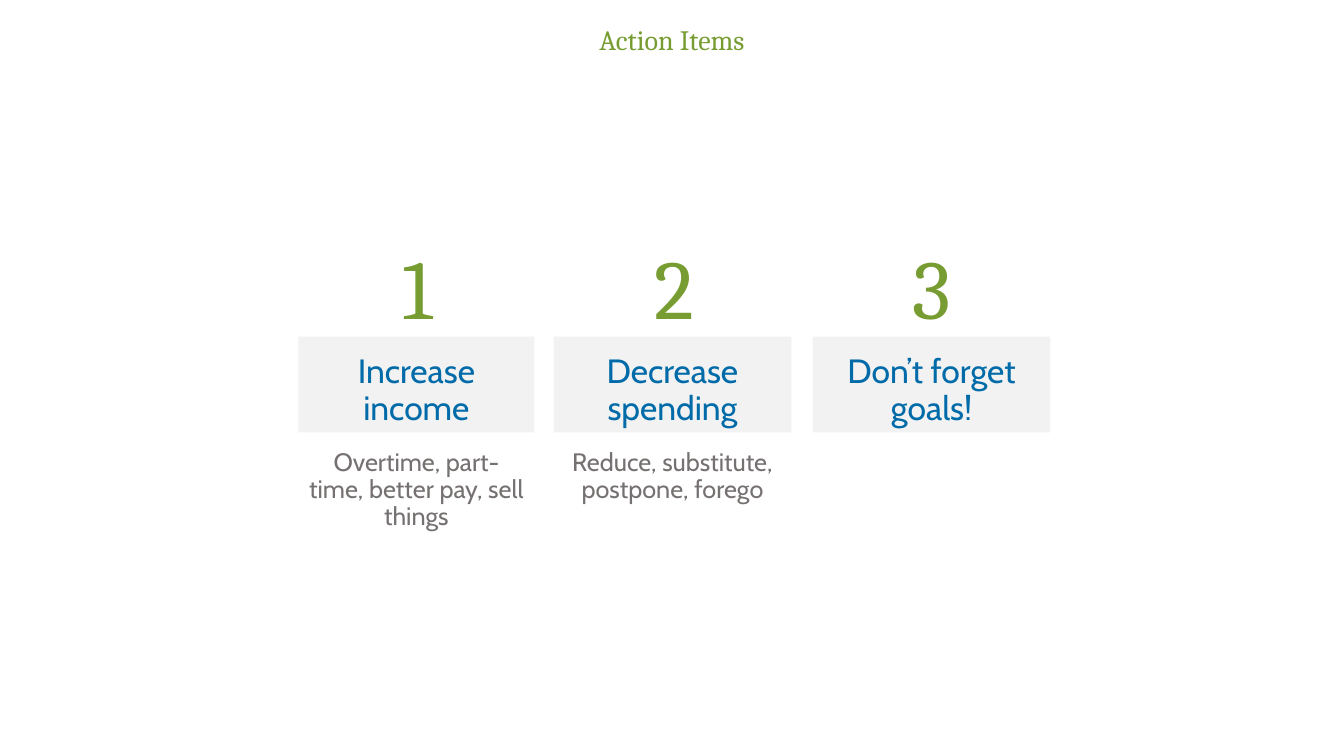
from dataclasses import dataclass

from pptx import Presentation
from pptx import util as u
from pptx.dml.color import RGBColor
from pptx.enum import shapes, text

PX = 9144  # EMU, 100 px to the inch
GREEN, BLUE, GREY, PALE = "779C31", "006BA8", "767171", "F2F2F2"
NUMBER_TOP, HEADING_TOP, DETAIL_TOP = 207, 334, 428
NUMBER_WIDTH, NUMBER_HEIGHT, BOX_HEIGHT = 236, 127, 95
TOP, BOTTOM = text.MSO_ANCHOR.TOP, text.MSO_ANCHOR.BOTTOM


@dataclass(frozen=True)
class Style:
    font: str
    size: int
    color: str
    spacing: float = 0.9
    anchor: text.MSO_ANCHOR = TOP
    insets: tuple[int, int, int, int] = (9, 18, 9, 0)


@dataclass(frozen=True)
class Action:
    number_left: int
    box_left: int
    box_width: int
    heading: str
    detail: str = ""


TITLE = Style("Cambria", 20, GREEN, insets=(10, 5, 10, 5))
NUMBER = Style("Cambria", 60, GREEN, 1.2, BOTTOM, (0, 0, 0, 0))
HEADING = Style("Cabin", 24, BLUE)
DETAIL = Style("Cabin", 18, GREY)

ACTIONS = [
    Action(296, 296, 234, "Increase income",
           "Overtime, part-time, better pay, sell things"),
    Action(551, 549, 236, "Decrease spending",
           "Reduce, substitute, postpone, forego"),
    Action(806, 806, 236, "Don’t forget goals!"),
]


def rgb(color: str) -> RGBColor:
    return RGBColor.from_string(color)


def set_all(target, values: dict) -> None:
    for name, value in values.items():
        setattr(target, name, value)


def write(sp, words: str, style: Style) -> None:
    tf = sp.text_frame
    sides = ("margin_left", "margin_top", "margin_right", "margin_bottom")
    set_all(tf, {"word_wrap": True, "auto_size": text.MSO_AUTO_SIZE.NONE,
                 "vertical_anchor": style.anchor})
    set_all(tf, {side: inset * PX for side, inset in zip(sides, style.insets)})
    p = tf.paragraphs[0]
    set_all(p, {"alignment": text.PP_ALIGN.CENTER,
                "line_spacing": style.spacing, "space_before": u.Pt(9.7)})
    r = p.add_run()
    r.text = words
    set_all(r.font, {"name": style.font, "size": u.Pt(style.size), "bold": False})
    r.font.color.rgb = rgb(style.color)


def add_text(slide, box: tuple[int, int, int, int], words: str, style: Style) -> None:
    write(slide.shapes.add_textbox(*(n * PX for n in box)), words, style)


def add_heading(slide, box: tuple[int, int, int, int], words: str) -> None:
    sp = slide.shapes.add_shape(shapes.MSO_SHAPE.RECTANGLE, *(n * PX for n in box))
    sp.shadow.inherit = False
    sp.fill.solid()
    sp.fill.fore_color.rgb = rgb(PALE)
    sp.line.fill.background()
    write(sp, words, HEADING)


def main() -> None:
    prs = Presentation()
    set_all(prs, {"slide_width": 1333 * PX, "slide_height": 750 * PX})
    slide = prs.slides.add_slide(prs.slide_layouts.get_by_name("Title Only"))
    title = slide.shapes.title
    set_all(title, {"left": 0, "top": 21 * PX,
                    "width": prs.slide_width, "height": 27 * PX})
    write(title, "Action Items", TITLE)

    for number, a in enumerate(ACTIONS, 1):
        add_text(slide, (a.number_left, NUMBER_TOP, NUMBER_WIDTH, NUMBER_HEIGHT),
                 str(number), NUMBER)
        add_heading(slide, (a.box_left, HEADING_TOP, a.box_width, BOX_HEIGHT),
                    a.heading)
        if a.detail:
            add_text(slide, (a.box_left, DETAIL_TOP, a.box_width, BOX_HEIGHT),
                     a.detail, DETAIL)
    prs.save("out.pptx")


if __name__ == "__main__":
    main()
